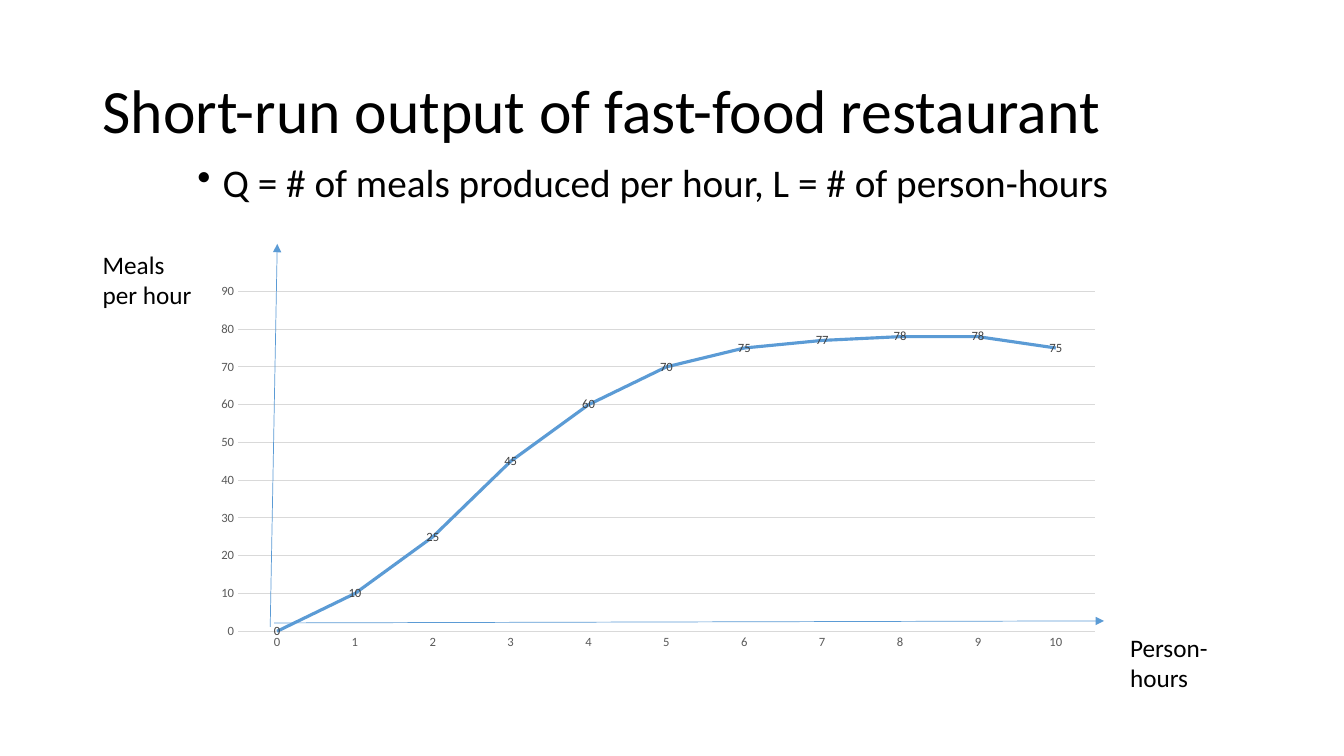
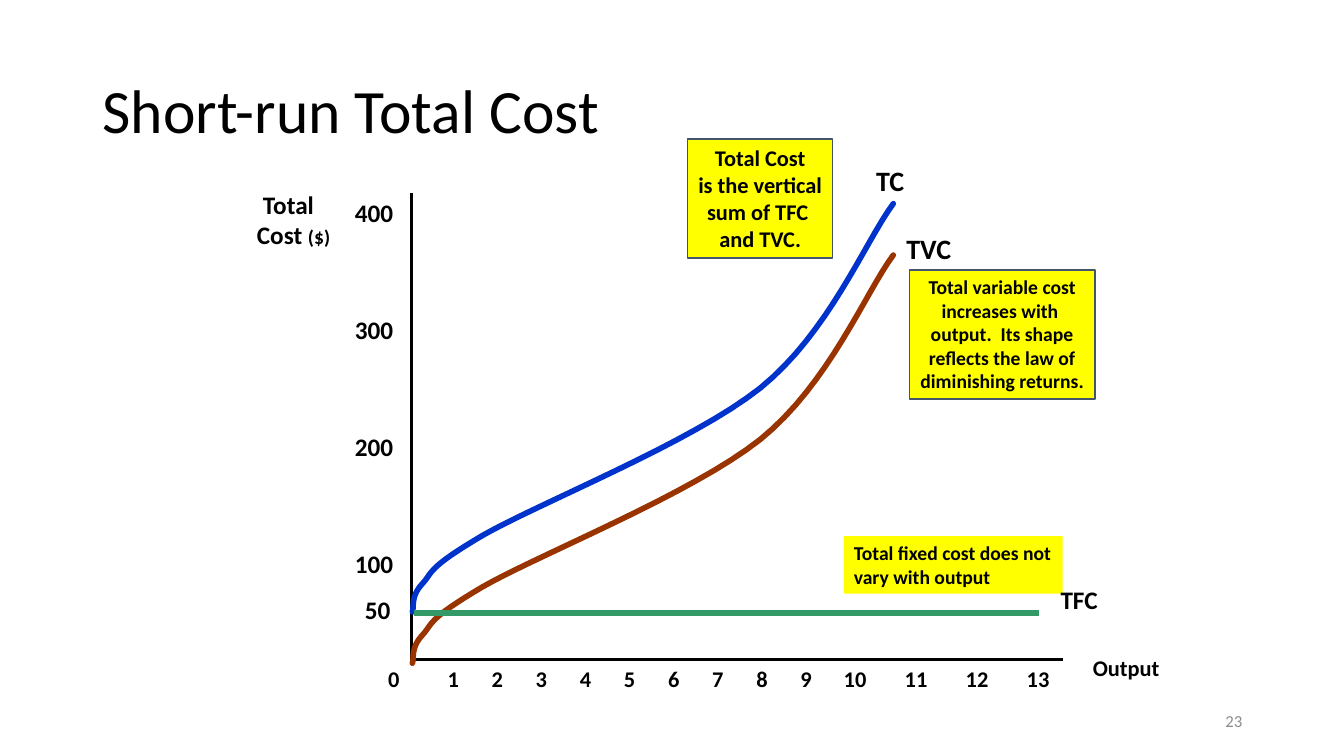
import lxml.etree
import pptx
import pptx.chart.data
import pptx.dml.color
import pptx.enum.chart
import pptx.enum.shapes
import pptx.enum.text
import pptx.oxml.ns
import pptx.util

Inches = pptx.util.Inches
Pt = pptx.util.Pt
Align = pptx.enum.text.PP_ALIGN
Anchor = pptx.enum.text.MSO_ANCHOR
color = pptx.dml.color.RGBColor.from_string
qn = pptx.oxml.ns.qn

FONT = "Calibri"
BLACK = "000000"
ACCENT = "5B9BD5"
GRID = "D9D9D9"
YELLOW = "FFFF00"
SLATE = "44546A"


def write(page, place, lines, size, bold=False, ink=BLACK, align=Align.LEFT,
          anchor=Anchor.TOP, wrap=False, spacing=None):
    box = page.shapes.add_textbox(*[Inches(length) for length in place])
    frame = box.text_frame
    frame.word_wrap = wrap
    frame.vertical_anchor = anchor
    frame.text = "\n".join(lines)
    for para in frame.paragraphs:
        para.alignment = align
        para.line_spacing = spacing
        para.font.name = FONT
        para.font.size = Pt(size)
        para.font.bold = bold
        para.font.color.rgb = color(ink)
    return box


def draw_line(page, start, end, ink, width, arrow=False):
    line = page.shapes.add_connector(
        pptx.enum.shapes.MSO_CONNECTOR.STRAIGHT,
        *[Inches(length) for length in start + end])
    line.line.color.rgb = color(ink)
    line.line.width = Pt(width)
    properties = line._element.spPr
    if arrow:
        stroke = properties.find(qn("a:ln"))
        lxml.etree.SubElement(stroke, qn("a:tailEnd"), type="triangle")
    lxml.etree.SubElement(properties, qn("a:effectLst"))


deck = pptx.Presentation()
deck.slide_width = Inches(13.33)
deck.slide_height = Inches(7.5)

pages = []
for title in ["Short-run output of fast-food restaurant", "Short-run Total Cost"]:
    page = deck.slides.add_slide(deck.slide_layouts[6])
    write(page, (0.92, 0.4, 11.5, 1.45), [title], 44,
          anchor=Anchor.MIDDLE, wrap=True, spacing=0.9)
    pages.append(page)
output_page, cost_page = pages

definition = write(output_page, (1.86, 1.57, 10.07, 0.6),
                   ["Q = # of meals produced per hour, L = # of person-hours"], 28,
                   wrap=True, spacing=0.9)
para = definition.text_frame.paragraphs[0]
para.space_before = Pt(10)
properties = para._p.get_or_add_pPr()
properties.set("marL", str(Inches(0.25)))
properties.set("indent", str(Inches(-0.25)))
bullet = lxml.etree.Element(qn("a:buChar"), char="•")
properties.find(qn("a:defRPr")).addprevious(bullet)

data = pptx.chart.data.CategoryChartData()
data.categories = [str(hours) for hours in range(11)]
data.add_series("Series 1", [0, 10, 25, 45, 60, 70, 75, 77, 78, 78, 75])
chart = output_page.shapes.add_chart(
    pptx.enum.chart.XL_CHART_TYPE.LINE,
    Inches(2), Inches(2.25), Inches(9.04), Inches(4.27), data).chart
chart.has_title = False
chart.has_legend = False
chart.font.name = FONT
chart.font.size = Pt(10)

for axis in [chart.category_axis, chart.value_axis]:
    axis.major_tick_mark = pptx.enum.chart.XL_TICK_MARK.NONE
    axis.minor_tick_mark = pptx.enum.chart.XL_TICK_MARK.NONE
    axis.tick_labels.font.name = FONT
    axis.tick_labels.font.size = Pt(9)
    axis.tick_labels.font.color.rgb = color("595959")
chart.value_axis.minimum_scale = 0
chart.value_axis.maximum_scale = 90
chart.value_axis.major_unit = 10
chart.value_axis.format.line.fill.background()
for rule in [chart.category_axis.format.line, chart.value_axis.major_gridlines.format.line]:
    rule.color.rgb = color(GRID)
    rule.width = Pt(0.75)

plot = chart.plots[0]
plot.vary_by_categories = False
series = plot.series[0]
series.smooth = False
series.marker.style = pptx.enum.chart.XL_MARKER_STYLE.NONE
series.format.line.color.rgb = color(ACCENT)
series.format.line.width = Pt(2.25)
labels = series.data_labels
labels.show_value = True
labels.position = pptx.enum.chart.XL_LABEL_POSITION.CENTER
labels.font.name = FONT
labels.font.size = Pt(9)
labels.font.color.rgb = color("404040")

plot_area = chart._chartSpace.chart.plotArea
for old_layout in plot_area.findall(qn("c:layout")):
    plot_area.remove(old_layout)
layout = lxml.etree.Element(qn("c:layout"))
manual = lxml.etree.SubElement(layout, qn("c:manualLayout"))
for tag, value in [("layoutTarget", "inner"), ("xMode", "edge"), ("yMode", "edge"),
                   ("x", "0.04"), ("y", "0.15"), ("w", "0.94"), ("h", "0.79")]:
    lxml.etree.SubElement(manual, qn("c:" + tag), val=value)
plot_area.insert(0, layout)

write(output_page, (0.92, 2.42, 1.08, 1.01), ["Meals per hour"], 18, wrap=True)
write(output_page, (11.11, 6.22, 0.98, 0.71), ["Person-hours"], 18, wrap=True)
draw_line(output_page, (2.68, 6.22), (2.75, 2.42), ACCENT, 0.5, arrow=True)
draw_line(output_page, (2.72, 6.18), (10.95, 6.16), ACCENT, 0.5, arrow=True)

draw_line(cost_page, (4.08, 1.91), (4.08, 6.57), BLACK, 2)
draw_line(cost_page, (4.09, 6.54), (10.54, 6.54), BLACK, 2)

axis_title = write(cost_page, (2.45, 1.83, 0.93, 0.7), ["Total", "Cost "], 18, bold=True)
total, cost = axis_title.text_frame.paragraphs
total._p.get_or_add_pPr().set("marL", str(Inches(0.06)))
span = cost.add_run()
span.text = "($)"
span.font.size = Pt(14)

for step in range(4):
    write(cost_page, (3.42, 5.39 - 1.16 * step, 0.58, 0.4),
          [str(100 * (step + 1))], 18, bold=True)

tick_lefts = [3.75]
tick_lefts += [4.34 + 0.4375 * step for step in range(9)]
tick_lefts += [8.27 + 0.605 * step for step in range(4)]
for quantity, left in enumerate(tick_lefts):
    width = 0.32 if quantity < 10 else 0.44
    write(cost_page, (left, 6.55, width, 0.36), [str(quantity)], 16, bold=True)

curve_start = (4.09, 6.58)
curve_segments = [
    [(4.11, 6.53), (4.07, 6.43), (4.19, 6.3)],
    [(4.3, 6.18), (4.23, 6.15), (4.79, 5.82)],
    [(5.35, 5.5), (6.86, 4.9), (7.54, 4.36)],
    [(8.22, 3.81), (8.58, 2.91), (8.86, 2.53)],
]
curve_points = [curve_start]
for first, second, end in curve_segments:
    start = curve_points[-1]
    for step in range(1, 17):
        t = step / 16
        weights = [(1 - t) ** 3, 3 * t * (1 - t) ** 2, 3 * t ** 2 * (1 - t), t ** 3]
        corners = [start, first, second, end]
        curve_points.append(tuple(
            sum(weight * corner[i] for weight, corner in zip(weights, corners))
            for i in range(2)))

for ink, rise in [("993300", 0), ("0033CC", 0.51)]:
    points = [(Inches(x), Inches(y - rise)) for x, y in curve_points]
    builder = cost_page.shapes.build_freeform(*points[0])
    builder.add_line_segments(points[1:], close=False)
    curve = builder.convert_to_shape()
    curve.shadow.inherit = False
    curve.fill.background()
    curve.line.color.rgb = color(ink)
    curve.line.width = Pt(4)
    curve._element.spPr.find(qn("a:ln")).set("cap", "rnd")

draw_line(cost_page, (4.11, 6.08), (10.31, 6.08), "339966", 4)

callouts = [
    ((9.02, 2.68, 1.84, 1.28), 14, Align.CENTER, SLATE,
     ["Total variable cost", "increases with ", "output.  Its shape",
      "reflects the law of", "diminishing returns."]),
    ((6.82, 1.38, 1.44, 1.18), 16, Align.CENTER, SLATE,
     ["Total Cost", "is the vertical", "sum of TFC ", "and TVC."]),
    ((8.37, 5.32, 2.17, 0.57), 14, Align.LEFT, None,
     ["Total fixed cost does not", "vary with output"]),
]
for place, size, align, outline, lines in callouts:
    box = write(cost_page, place, lines, size, bold=True, align=align)
    box.fill.solid()
    box.fill.fore_color.rgb = color(YELLOW)
    if outline:
        box.line.color.rgb = color(outline)
        box.line.width = Pt(1)

for place, label, size in [
    ((10.74, 6.44, 0.87, 0.37), "Output", 16),
    ((8.89, 2.25, 0.65, 0.43), "TVC", 20),
    ((8.59, 1.57, 0.48, 0.43), "TC", 20),
    ((10.42, 5.75, 0.61, 0.4), "TFC", 18),
    ((3.52, 5.85, 0.46, 0.4), "50", 18),
]:
    write(cost_page, place, [label], size, bold=True)

write(cost_page, (9.42, 6.95, 3, 0.4), ["23"], 12, ink="8C8C8C",
      align=Align.RIGHT, anchor=Anchor.MIDDLE, wrap=True)

deck.save("out.pptx")
